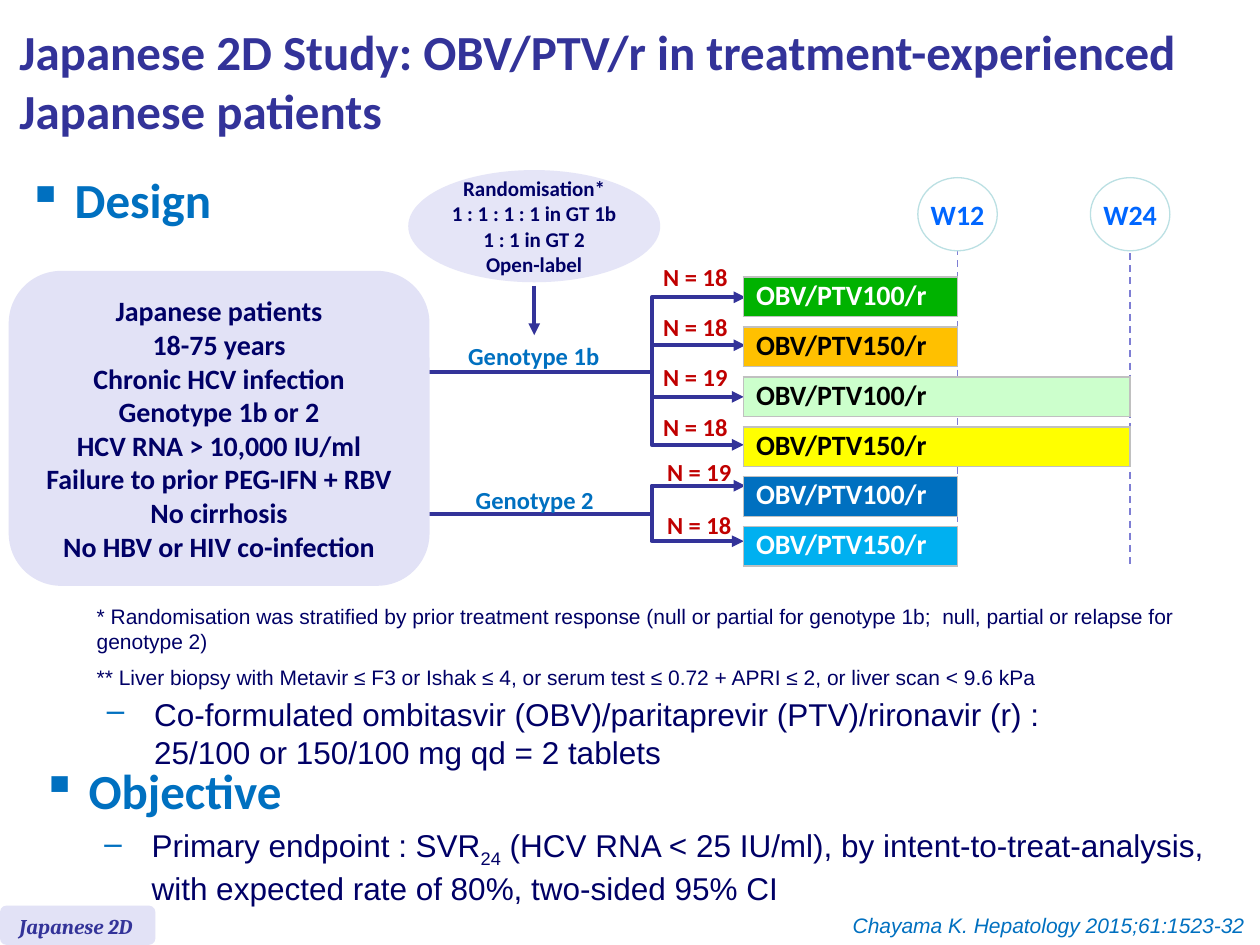
"""Build the Japanese 2D study design slide."""
from dataclasses import dataclass

from lxml import etree
from pptx import Presentation
from pptx.dml.color import RGBColor
from pptx.enum.dml import MSO_LINE
from pptx.enum.shapes import MSO_CONNECTOR, MSO_SHAPE
from pptx.enum.text import MSO_ANCHOR, PP_ALIGN
from pptx.oxml.ns import qn
from pptx.util import Pt

STRAIGHT, ELBOW = MSO_CONNECTOR.STRAIGHT, MSO_CONNECTOR.ELBOW
ELLIPSE, ROUNDED = MSO_SHAPE.OVAL, MSO_SHAPE.ROUNDED_RECTANGLE
LEFT, CENTER, RIGHT = PP_ALIGN.LEFT, PP_ALIGN.CENTER, PP_ALIGN.RIGHT
TOP, MIDDLE = MSO_ANCHOR.TOP, MSO_ANCHOR.MIDDLE
DASH = MSO_LINE.DASH


@dataclass(frozen=True)
class Theme:
    """Colours, fonts and type sizes of the slide."""
    indigo: str = "333399"
    navy: str = "000066"
    blue: str = "0070C0"
    week: str = "0066FF"
    red: str = "C00000"
    white: str = "FFFFFF"
    black: str = "000000"
    lavender: str = "E2E2F6"
    pale: str = "E5E5F7"
    violet: str = "7E7ED4"
    ring: str = "BBE0E3"
    silver: str = "C0C0C0"
    green: str = "00B200"
    amber: str = "FFC000"
    mint: str = "CCFFCC"
    yellow: str = "FFFF00"
    sky: str = "00B0F0"
    head: str = "Calibri"
    body: str = "Arial"
    tag: str = "Cambria"
    title: int = 28
    text: int = 18
    bar: int = 16
    label: int = 14
    note: int = 12


def assign(target, values):
    """Set attributes from a dict."""
    for name, value in values.items():
        setattr(target, name, value)


def child(parent, tag, **attributes):
    """Append an XML element with attributes."""
    element = etree.SubElement(parent, qn(tag))
    for name, value in attributes.items():
        element.set(name, str(value))
    return element


def font(name, size, color, bold=False, italic=False):
    """Describe a type style."""
    return {"name": name, "size": Pt(size), "bold": bold, "italic": italic}, RGBColor.from_string(color)


class SlideMaker:
    """Hold the theme and the current page, and draw each kind of element."""

    def __init__(self, page, theme):
        """Keep the page and its theme."""
        self.page, self.theme = page, theme

    def add_spans(self, para, text, style):
        """Add text with line breaks and underscore-marked subscripts."""
        values, color = style
        for row, line in enumerate(text.split("\v")):
            if row:
                para.add_line_break()
            for index, piece in enumerate(line.split("_")):
                span = para.add_run()
                span.text = piece
                assign(span.font, values)
                span.font.color.rgb = color
                if index % 2:
                    span.font._element.set("baseline", "-25000")

    def fill_frame(self, frame, lines, style, align=LEFT, anchor=TOP, wrap=True):
        """Add one paragraph for each line."""
        assign(frame, {"word_wrap": wrap, "vertical_anchor": anchor})
        for index, line in enumerate(lines):
            para = frame.add_paragraph() if index else frame.paragraphs[0]
            para.alignment = align
            self.add_spans(para, line, style)

    def text(self, at, line, style, **layout):
        """Add a text box with one paragraph."""
        box = self.page.shapes.add_textbox(*map(Pt, at))
        self.fill_frame(box.text_frame, [line], style, **layout)

    def bullets(self, at, items):
        """Add a text box of bullets given as level and text."""
        theme = self.theme
        looks = (("▪", font(theme.head, theme.title, theme.blue, True)),
                 ("–", font(theme.body, theme.text, theme.navy)))
        frame = self.page.shapes.add_textbox(*map(Pt, at)).text_frame
        frame.word_wrap = True
        for index, (level, line) in enumerate(items):
            para = frame.add_paragraph() if index else frame.paragraphs[0]
            mark, style = looks[level]
            para.level = level
            if index:
                para.space_before = Pt(3.6)
            properties = para._p.get_or_add_pPr()
            properties.set("marL", str(Pt(27 + 36 * level)))
            properties.set("indent", str(Pt(-27)))
            child(child(properties, "a:buClr"), "a:srgbClr", val=theme.blue)
            child(properties, "a:buChar", char=mark)
            self.add_spans(para, line, style)

    def shape(self, kind, at, fill, lines=(), style=None, outline=None, wrap=True, inset=None):
        """Add a filled shape with centred text."""
        box = self.page.shapes.add_shape(kind, *map(Pt, at))
        box.shadow.inherit = False
        box.fill.solid()
        box.fill.fore_color.rgb = RGBColor.from_string(fill)
        if outline:
            box.line.color.rgb = RGBColor.from_string(outline)
            box.line.width = Pt(0.75)
        else:
            box.line.fill.background()
        if inset is not None:
            sides = ("left", "top", "right", "bottom")
            assign(box.text_frame, {f"margin_{side}": Pt(inset) for side in sides})
        self.fill_frame(box.text_frame, lines, style, CENTER, MIDDLE, wrap)

    def line(self, start, end, color, width=2.25, dash=None, arrows=(), bend=None):
        """Add a connector, with an optional bend left of its start."""
        kind = ELBOW if bend else STRAIGHT
        link = self.page.shapes.add_connector(kind, *map(Pt, start + end))
        link.line.color.rgb = RGBColor.from_string(color)
        assign(link.line, {"width": Pt(width), "dash_style": dash})
        properties = link._element.spPr
        for arrow in arrows:
            child(properties.find(qn("a:ln")), arrow, type="triangle")
        child(properties, "a:effectLst")
        if bend:
            ratio = round(100000 * bend / (start[0] - end[0]))
            guides = properties.find(".//" + qn("a:avLst"))
            child(guides, "a:gd", name="adj1", fmla=f"val {ratio}")

    def bar(self, at, words, fill, color):
        """Add a one-cell table as a treatment bar."""
        theme = self.theme
        table = self.page.shapes.add_table(1, 1, *map(Pt, at)).table
        assign(table, {"first_row": False, "horz_banding": False})
        cell = table.cell(0, 0)
        properties = cell._tc.get_or_add_tcPr()
        for side in "LRTB":
            edge = child(properties, f"a:ln{side}", w=Pt(1))
            child(child(edge, "a:solidFill"), "a:srgbClr", val=theme.silver)
        cell.fill.solid()
        cell.fill.fore_color.rgb = RGBColor.from_string(fill)
        cell.vertical_anchor = MIDDLE
        para = cell.text_frame.paragraphs[0]
        para.line_spacing = 0.8
        self.add_spans(para, words, font(theme.head, theme.bar, color, True))


def main():
    """Build and save the deck."""
    deck = Presentation()
    assign(deck, {"slide_width": Pt(720), "slide_height": Pt(540)})
    theme = Theme()
    maker = SlideMaker(deck.slides.add_slide(deck.slide_layouts[6]), theme)
    note = font(theme.body, theme.note, theme.navy)

    maker.shape(ROUNDED, (0, 517.5, 88.8, 22.5), theme.lavender)
    maker.text((4, 518.2, 85, 21.8), "Japanese 2D", font(theme.tag, theme.note, theme.indigo, True, True))
    maker.text((4, 2.2, 708, 87), "Japanese 2D Study: OBV/PTV/r in treatment-experienced Japanese patients",
               font(theme.head, theme.title, theme.indigo, True), anchor=MIDDLE)
    maker.text((444, 517.8, 274.5, 21.8), "Chayama K. Hepatology 2015;61:1523-32",
               font(theme.body, theme.note, theme.blue, italic=True), align=RIGHT)
    maker.bullets((16.5, 431.3, 707, 86.4), [
        (0, "Objective"),
        (1, "Primary endpoint : SVR_24_ (HCV RNA < 25 IU/ml), by intent-to-treat-analysis, "
            "with expected rate of 80%, two-sided 95% CI")])
    maker.bullets((8.6, 93.6, 142.6, 45.4), [(0, "Design")])
    maker.bullets((18, 393.8, 682, 51), [
        (1, "Co-formulated ombitasvir (OBV)/paritaprevir (PTV)/rironavir (r) :\v"
            "25/100 or 150/100 mg qd = 2 tablets")])
    maker.text((48.2, 341.3, 653, 36), "* Randomisation was stratified by prior treatment response "
               "(null or partial for genotype 1b;  null, partial or relapse for genotype 2)", note)
    maker.text((48.2, 376, 652, 21.8), "** Liver biopsy with Metavir ≤ F3 or Ishak ≤ 4, or serum test "
               "≤ 0.72 + APRI ≤ 2, or liver scan < 9.6 kPa", note)

    maker.line((305.3, 163.4), (305.3, 191.5), theme.indigo, arrows=["a:tailEnd"])
    maker.shape(ELLIPSE, (233.3, 97.2, 144, 64.1), theme.pale,
                ["Randomisation*", "1 : 1 : 1 : 1 in GT 1b", "1 : 1 in GT 2", "Open-label"],
                font(theme.head, theme.note, theme.navy, True), wrap=False, inset=0)
    for y in (212.4, 293.8):
        maker.line((238.3, y), (372, y), theme.indigo)
    for top, bottom in ((169.9, 226.8), (197.3, 254.2), (277.6, 309.3)):
        maker.line((426, top), (425, bottom), theme.indigo, arrows=["a:headEnd", "a:tailEnd"], bend=54)
    for week, x, top in (("W24", 645.8, 144.7), ("W12", 547.2, 141.8)):
        maker.line((x, top), (x, top + 178.6), theme.violet, 1, DASH)
        maker.shape(ELLIPSE, (x - 22.7, 101.5, 45.4, 41.8), theme.white, [week],
                    font(theme.head, theme.bar, theme.week, True), theme.ring, wrap=False)

    arms = ((100, 122.4, theme.green, theme.white), (150, 122.4, theme.amber, theme.black),
            (100, 221, theme.mint, theme.black), (150, 221, theme.yellow, theme.black),
            (100, 122.4, theme.blue, theme.white), (150, 122.4, theme.sky, theme.white))
    for index, (dose, width, fill, color) in enumerate(arms):
        maker.bar((424.8, 158.4 + 28.5 * index, width, 22.4), f"OBV/PTV{dose}/r", fill, color)

    maker.shape(ROUNDED, (5, 154.8, 240.5, 180), theme.lavender,
                ["Japanese patients", "18-75 years", "Chronic HCV infection", "Genotype 1b or 2",
                 "HCV RNA > 10,000 IU/ml", "Failure to prior PEG-IFN + RBV", "No cirrhosis",
                 "No HBV or HIV co-infection"], font(theme.head, theme.bar, theme.navy, True))
    for x, y, width, words, color in (
            (260, 191.5, 90, "Genotype 1b", theme.blue), (264.2, 273.6, 82.8, "Genotype 2", theme.blue),
            (371.5, 146.2, 51.8, "N = 18", theme.red), (371.5, 174.7, 51.8, "N = 18", theme.red),
            (371.5, 203.2, 51.8, "N = 19", theme.red), (371.5, 231.7, 51.8, "N = 18", theme.red),
            (373.7, 257.8, 51.8, "N = 19", theme.red), (373.7, 288, 51.8, "N = 18", theme.red)):
        maker.text((x, y, width, 24.5), words, font(theme.head, theme.label, color, True),
                   align=CENTER, wrap=False)
    deck.save("out.pptx")


if __name__ == "__main__":
    main()
